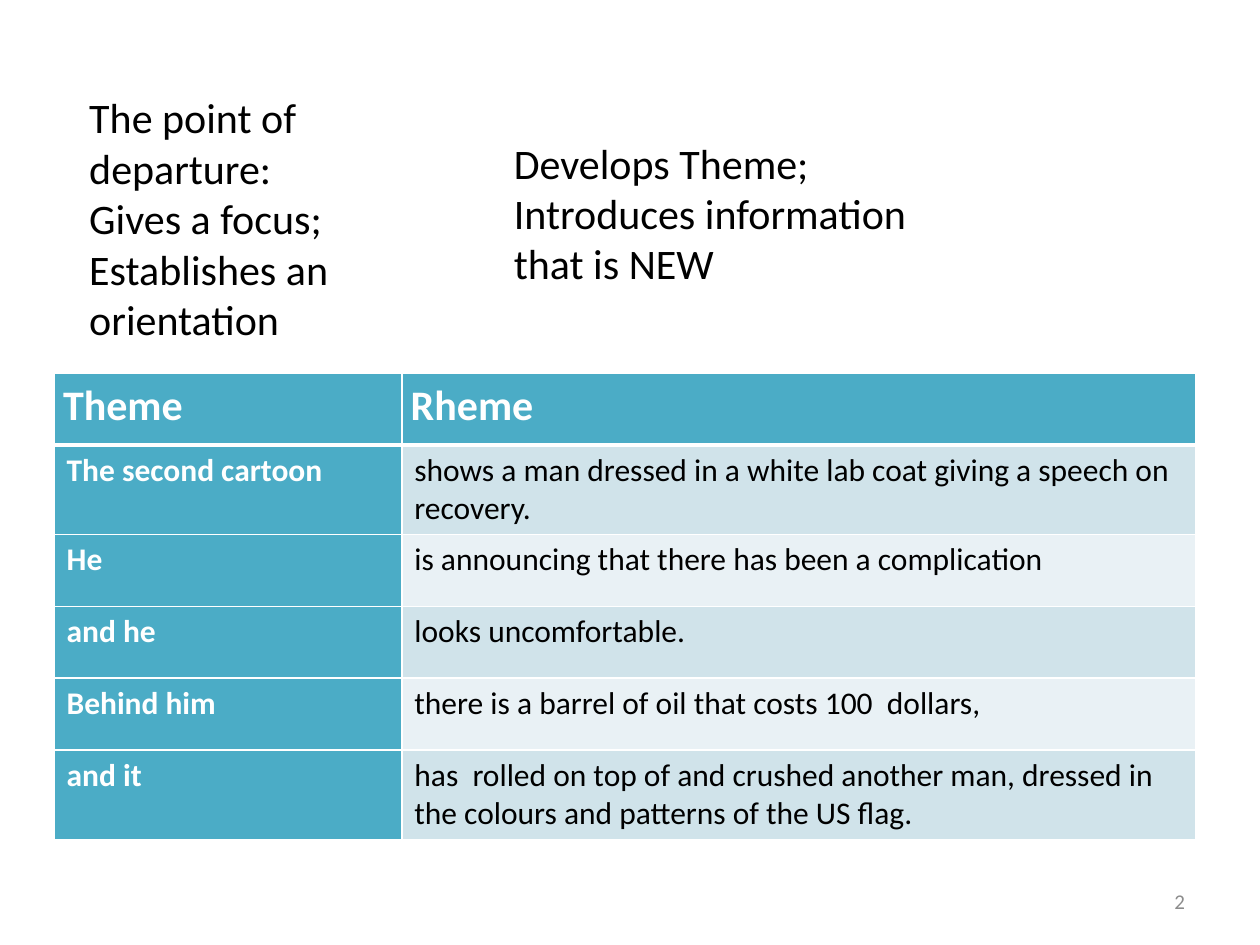
from dataclasses import dataclass

import lxml.etree
import pptx
import pptx.dml.color
import pptx.enum.text
import pptx.oxml.ns
import pptx.util
from pptx.util import Cm

ALIGN = pptx.enum.text.PP_ALIGN
ANCHOR = pptx.enum.text.MSO_ANCHOR


@dataclass(frozen=True)
class Theme:
    font: str = "Calibri"
    accent: str = "4BACC6"
    bands: tuple = ("D0E3EA", "E9F1F5")
    light: str = "FFFFFF"
    dark: str = "000000"
    muted: str = "8C8C8C"
    heading: int = 24
    body: int = 18
    small: int = 12
    rule: int = 1
    header_rule: int = 3


THEME = Theme()

HEADINGS = ("Theme", "Rheme")
CLAUSES = [
    ("The second cartoon",
     "shows a man dressed in a white lab coat giving a speech on recovery."),
    ("He", "is announcing that there has been a complication"),
    ("and he", "looks uncomfortable."),
    ("Behind him", "there is a barrel of oil that costs 100  dollars,"),
    ("and it", "has  rolled on top of and crushed another man, dressed in "
               "the colours and patterns of the US flag."),
]
THEME_ROLE = ["The point of departure:", "Gives a focus;",
              "Establishes an orientation"]
RHEME_ROLE = ["Develops Theme;", "Introduces information that is NEW"]


def apply(target, formats):
    for attribute, value in formats.items():
        setattr(target, attribute, value)


def write(frame, lines, size, color, bold=False, **paragraph_formats):
    """Fill a text frame with one paragraph per line."""
    frame.word_wrap = True
    for index, line in enumerate(lines):
        paragraph = frame.add_paragraph() if index else frame.paragraphs[0]
        apply(paragraph, paragraph_formats)
        run = paragraph.add_run()
        run.text = line
        apply(run.font, {"name": THEME.font, "size": pptx.util.Pt(size),
                         "bold": bold})
        run.font.color.rgb = pptx.dml.color.RGBColor.from_string(color)


def add_text(slide, box, lines, size, color, anchor=ANCHOR.TOP, **formats):
    frame = slide.shapes.add_textbox(*map(Cm, box)).text_frame
    frame.vertical_anchor = anchor
    write(frame, lines, size, color, **formats)


def set_borders(cell, widths):
    """Draw borders given as side letter to width in points."""
    properties = cell._tc.get_or_add_tcPr()
    qn = pptx.oxml.ns.qn
    for side, width in widths.items():
        line = lxml.etree.SubElement(properties, qn(f"a:ln{side}"),
                                     w=str(pptx.util.Pt(width)))
        fill = lxml.etree.SubElement(line, qn("a:solidFill"))
        lxml.etree.SubElement(fill, qn("a:srgbClr"), val=THEME.light)


def fill_cell(cell, color):
    cell.fill.solid()
    cell.fill.fore_color.rgb = pptx.dml.color.RGBColor.from_string(color)


def add_clause_table(slide, left, top, column_widths, row_height):
    rows = [HEADINGS, *CLAUSES]
    table = slide.shapes.add_table(
        len(rows), len(HEADINGS), Cm(left), Cm(top),
        Cm(sum(column_widths)), Cm(row_height * len(rows))).table
    for column, width in zip(table.columns, column_widths):
        column.width = Cm(width)

    for r, texts in enumerate(rows):
        is_header = r == 0
        for c, text in enumerate(texts):
            cell = table.cell(r, c)
            set_borders(cell, {
                "L": THEME.rule, "R": THEME.rule,
                "T": THEME.header_rule if r == 1 else THEME.rule,
                "B": THEME.header_rule if is_header else THEME.rule})
            emphasised = is_header or c == 0
            fill_cell(cell, THEME.accent if emphasised
                      else THEME.bands[(r - 1) % 2])
            formats = {}
            if is_header:
                apply(cell, {"margin_left": Cm(0.18), "margin_right": Cm(0.18),
                             "margin_top": 0, "margin_bottom": 0})
                formats = {"alignment": ALIGN.JUSTIFY, "line_spacing": 1.15}
            write(cell.text_frame, [text],
                  THEME.heading if is_header else THEME.body,
                  THEME.light if emphasised else THEME.dark,
                  bold=emphasised, **formats)


def main():
    deck = pptx.Presentation()
    apply(deck, {"slide_width": Cm(25.4), "slide_height": Cm(19.05)})
    slide = deck.slides.add_slide(deck.slide_layouts[6])

    add_clause_table(slide, 1.09, 7.52, (7.01, 16), 1.45)
    add_text(slide, (1.55, 1.73, 5.79, 5.38), THEME_ROLE,
             THEME.heading, THEME.dark)
    add_text(slide, (10.11, 2.64, 9.19, 3.33), RHEME_ROLE,
             THEME.heading, THEME.dark)
    add_text(slide, (18.21, 17.65, 5.93, 1.02), ["2"], THEME.small,
             THEME.muted, anchor=ANCHOR.MIDDLE, alignment=ALIGN.RIGHT)

    deck.save("out.pptx")


if __name__ == "__main__":
    main()
